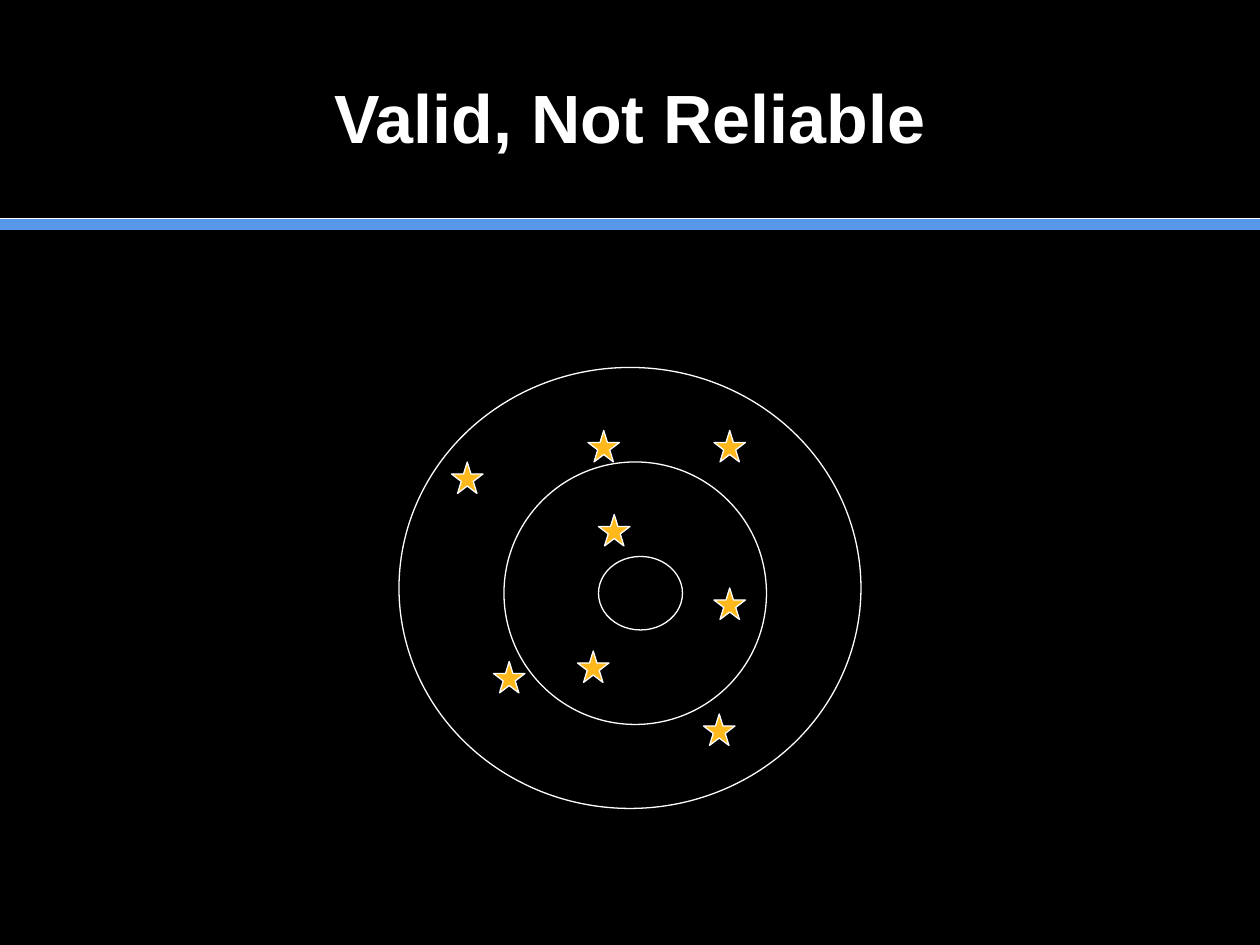
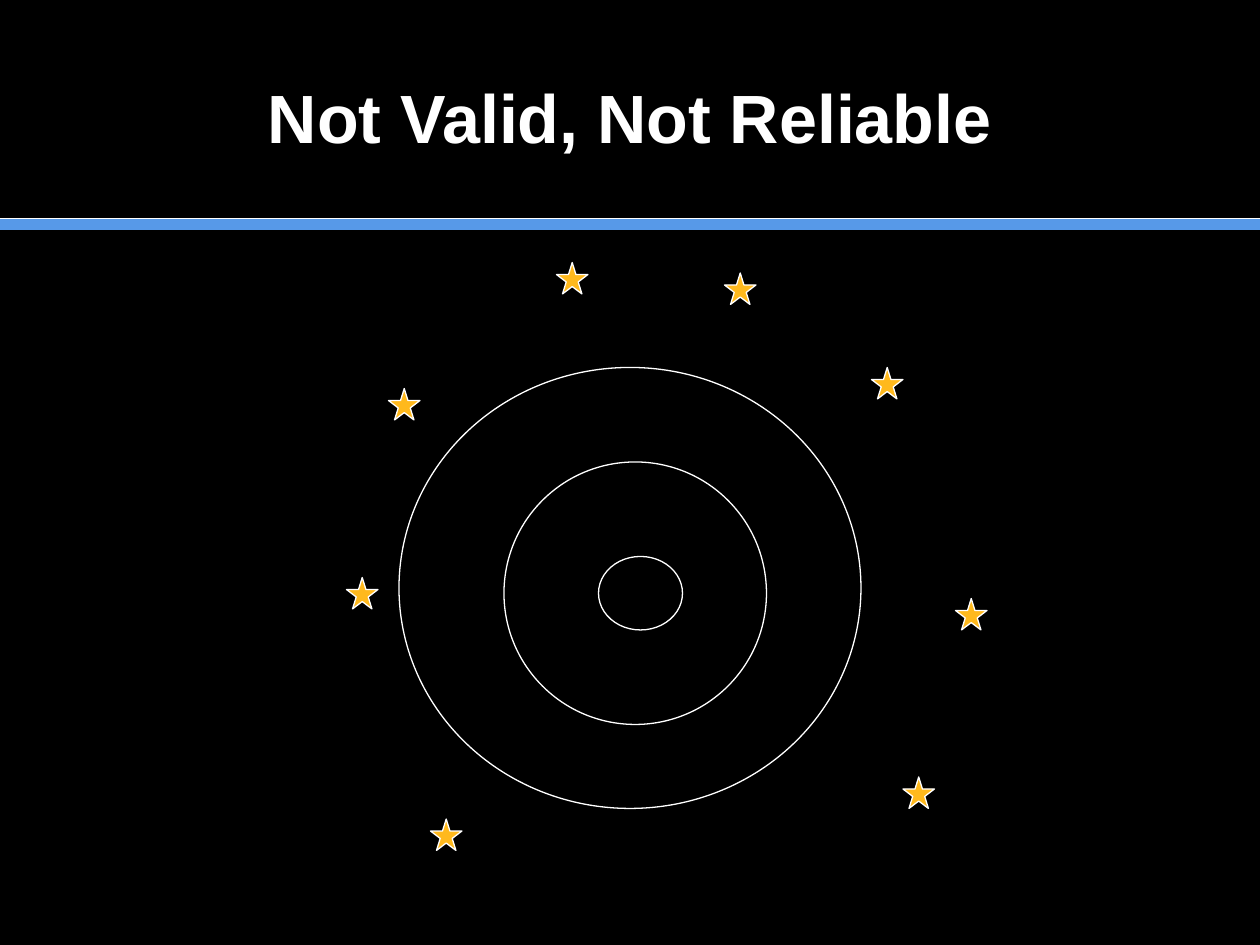
from lxml import etree
from pptx import Presentation
from pptx.dml.color import RGBColor
from pptx.enum.shapes import MSO_CONNECTOR as CONN, MSO_SHAPE as SHAPE
from pptx.enum.text import MSO_ANCHOR as ANCHOR, PP_ALIGN as ALIGN
from pptx.oxml.ns import qn
from pptx.util import Pt

BLACK = RGBColor(0x00, 0x00, 0x00)
WHITE = RGBColor(0xFF, 0xFF, 0xFF)
BLUE = RGBColor(0x57, 0x99, 0xE8)
GOLD = RGBColor(0xFF, 0xB9, 0x1D)

WIDTH, HEIGHT = 720, 540
STAR_SIZE = 18
RULES = [(128.2, BLUE, 7), (124.6, WHITE, 0.5)]
RINGS = [(228, 210, 264, 252), (288, 264, 150, 150), (342, 318, 48, 42)]
SLIDES = {
    "Valid, Not Reliable": [
        (330, 372), (408, 336), (342, 294), (282, 378),
        (408, 246), (258, 264), (402, 408), (336, 246),
    ],
    "Not Valid, Not Reliable": [
        (498, 210), (516, 444), (546, 342), (198, 330),
        (246, 468), (222, 222), (414, 156), (318, 150),
    ],
}


class Deck:
    """Holds the deck style and the current slide, and draws each kind of element."""

    title_font = {"name": "Arial", "size": Pt(39), "bold": True}
    title_frame = {"word_wrap": True, "vertical_anchor": ANCHOR.MIDDLE}
    outline = 0.75

    def __init__(self):
        self.prs = Presentation()
        self.prs.slide_width, self.prs.slide_height = Pt(WIDTH), Pt(HEIGHT)
        self.s = None

    def slide(self, title):
        self.s = self.prs.slides.add_slide(self.prs.slide_layouts[6])
        fill = self.s.background.fill
        fill.solid()
        fill.fore_color.rgb = BLACK
        for y, color, weight in RULES:
            self.rule(y, color, weight)
        self.title(title)

    def rule(self, y, color, weight):
        c = self.s.shapes.add_connector(CONN.STRAIGHT, 0, Pt(y), Pt(WIDTH), Pt(y))
        c.line.color.rgb = color
        c.line.width = Pt(weight)
        etree.SubElement(c.element.spPr, qn("a:effectLst"))

    def title(self, text):
        tf = self.s.shapes.add_textbox(Pt(36), Pt(21.6), Pt(648), Pt(90)).text_frame
        for key, value in self.title_frame.items():
            setattr(tf, key, value)
        p = tf.paragraphs[0]
        p.alignment = ALIGN.CENTER
        r = p.add_run()
        r.text = text
        for key, value in self.title_font.items():
            setattr(r.font, key, value)
        r.font.color.rgb = WHITE

    def shape(self, kind, box, color=None):
        sp = self.s.shapes.add_shape(kind, *map(Pt, box))
        sp.shadow.inherit = False
        if color is None:
            sp.fill.background()
        else:
            sp.fill.solid()
            sp.fill.fore_color.rgb = color
        sp.line.color.rgb = WHITE
        sp.line.width = Pt(self.outline)

    def target(self):
        for box in RINGS:
            self.shape(SHAPE.OVAL, box)

    def star(self, x, y):
        self.shape(SHAPE.STAR_5_POINT, (x, y, STAR_SIZE, STAR_SIZE), GOLD)


def main():
    deck = Deck()
    for title, hits in SLIDES.items():
        deck.slide(title)
        deck.target()
        for x, y in hits:
            deck.star(x, y)
    deck.prs.save("out.pptx")


if __name__ == "__main__":
    main()
